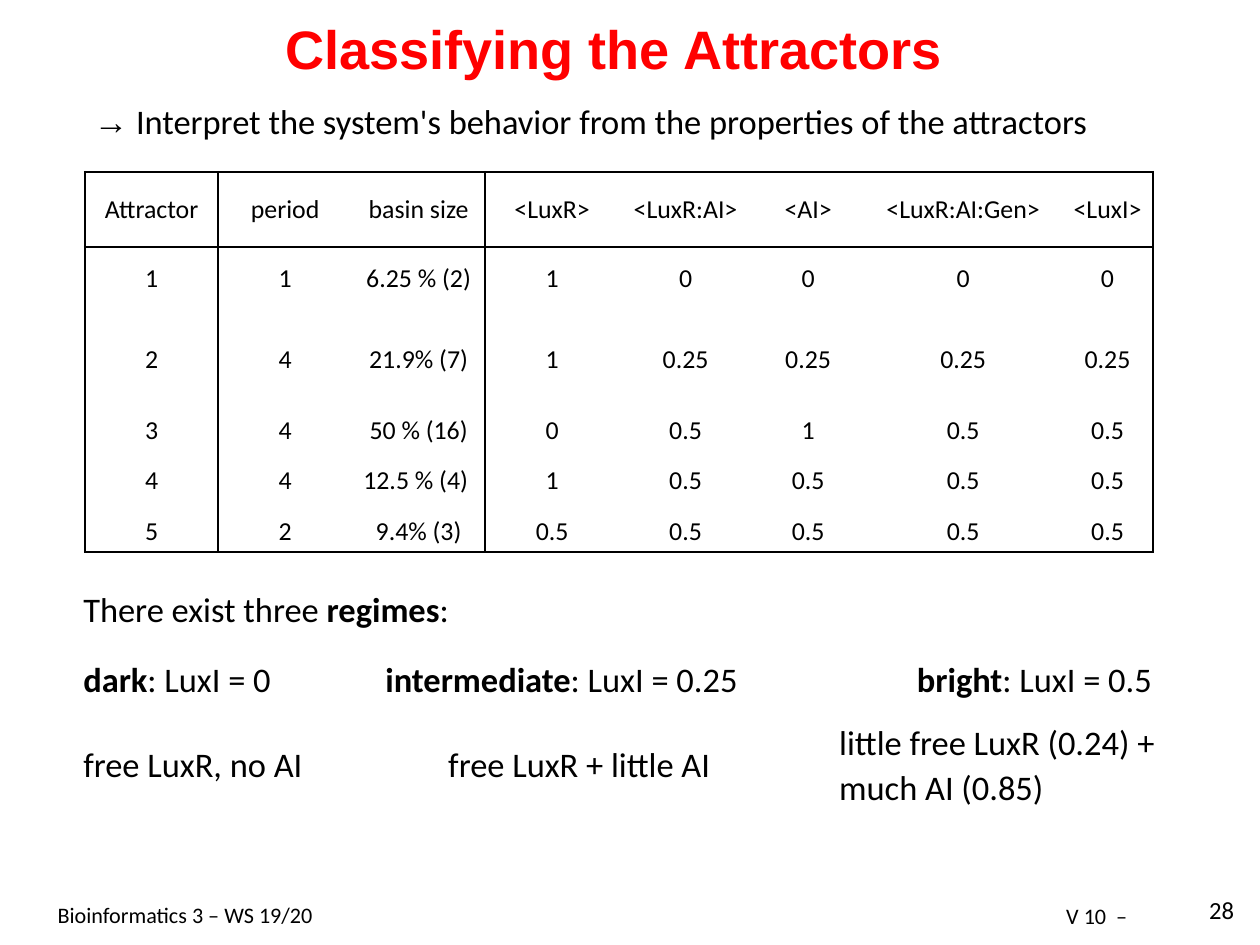
from lxml import etree
from pptx import Presentation
from pptx.dml.color import RGBColor
from pptx.enum.text import MSO_ANCHOR, PP_ALIGN
from pptx.oxml.ns import qn
from pptx.util import Pt

LEFT, CENTER, RIGHT = PP_ALIGN.LEFT, PP_ALIGN.CENTER, PP_ALIGN.RIGHT
TOP, MIDDLE, BOTTOM = MSO_ANCHOR.TOP, MSO_ANCHOR.MIDDLE, MSO_ANCHOR.BOTTOM

THEME = {
    "black": RGBColor(0, 0, 0),
    "white": RGBColor(255, 255, 255),
    "red": RGBColor(255, 0, 0),
    "title": 44,
    "body": 28,
    "cell": 21,
    "number": 20,
    "footer": 18,
    "heading_font": "Arial",
    "body_font": "Calibri",
}


def add_span(para, text, size, bold=False, font="body_font", color="black"):
    span = para.add_run()
    span.text = text
    span.font.size = Pt(THEME[size])
    span.font.bold = bold
    span.font.name = THEME[font]
    span.font.color.rgb = THEME[color]


def add_box(page, left, top, width, height, align=LEFT, anchor=TOP, spacing=1.1):
    frame = page.shapes.add_textbox(Pt(left), Pt(top), Pt(width), Pt(height)).text_frame
    frame.word_wrap = True
    frame.vertical_anchor = anchor
    frame.margin_left = frame.margin_right = frame.margin_top = frame.margin_bottom = 0
    para = frame.paragraphs[0]
    para.alignment = align
    para.line_spacing = spacing
    return para


deck = Presentation()
deck.slide_width, deck.slide_height = Pt(1024), Pt(768)
page = deck.slides.add_slide(deck.slide_layouts[6])

title = add_box(page, 65, 3, 868, 62.5, CENTER, BOTTOM, 1)
add_span(title, "Classifying the Attractors", "title", True, "heading_font", "red")

intro = add_box(page, 76.3, 77.8, 872, 37)
add_span(intro, "→", "body", font="heading_font")
add_span(intro, " Interpret the system's behavior from the properties of the attractors", "body")

attractors = [
    ["Attractor", "period", "basin size", "<LuxR>", "<LuxR:AI>", "<AI>", "<LuxR:AI:Gen>", "<LuxI>"],
    ["1", "1", "6.25 % (2)", "1", "0", "0", "0", "0"],
    ["2", "4", "21.9% (7)", "1", "0.25", "0.25", "0.25", "0.25"],
    ["3", "4", "50 % (16)", "0", "0.5", "1", "0.5", "0.5"],
    ["4", "4", "12.5 % (4) ", "1", "0.5", "0.5", "0.5", "0.5"],
    ["5", "2", "9.4% (3)", "0.5", "0.5", "0.5", "0.5", "0.5"],
]
column_widths = [108.5] * 5 + [90.7, 161.3, 73.4]
row_heights = [61.2, 51, 81, 33.8, 47.3, 34.6]
ruled_columns = {0, 1, 3, 8}
ruled_rows = {0, 1, 6}

table = page.shapes.add_table(
    len(row_heights), len(column_widths), Pt(69), Pt(139.7),
    Pt(sum(column_widths)), Pt(sum(row_heights)),
).table
table.first_row = table.horz_banding = False
for column, width in zip(table.columns, column_widths):
    column.width = Pt(width)
for row, height in zip(table.rows, row_heights):
    row.height = Pt(height)

for row_index, values in enumerate(attractors):
    for column_index, value in enumerate(values):
        cell = table.cell(row_index, column_index)
        cell.vertical_anchor = MIDDLE
        cell.margin_left = cell.margin_right = cell.margin_top = cell.margin_bottom = Pt(4.5)
        para = cell.text_frame.paragraphs[0]
        para.alignment = CENTER
        add_span(para, value, "cell")
        properties = cell._tc.get_or_add_tcPr()
        sides = {
            "a:lnL": column_index in ruled_columns,
            "a:lnR": column_index + 1 in ruled_columns,
            "a:lnT": row_index in ruled_rows,
            "a:lnB": row_index + 1 in ruled_rows,
        }
        for side, ruled in sides.items():
            line = etree.SubElement(properties, qn(side), w=str(Pt(2)))
            if ruled:
                paint = etree.SubElement(line, qn("a:solidFill"))
                etree.SubElement(paint, qn("a:srgbClr"), val=str(THEME["black"]))
            else:
                etree.SubElement(line, qn("a:noFill"))
        cell.fill.solid()
        cell.fill.fore_color.rgb = THEME["white"]

regimes = add_box(page, 67.7, 474.5, 337, 37)
add_span(regimes, "There exist three ", "body")
add_span(regimes, "regimes", "body", True)
add_span(regimes, ":", "body")

regime_levels = [
    (67.7, 173, "dark", ": LuxI = 0"),
    (313.2, 328, "intermediate", ": LuxI = 0.25"),
    (745.2, 212, "bright", ": LuxI = 0.5"),
]
for left, width, regime, level in regime_levels:
    para = add_box(page, left, 531.4, width, 33)
    add_span(para, regime, "body", True)
    add_span(para, level, "body")

regime_causes = [
    (67.7, 600.5, 220, 32, "free LuxR, no AI"),
    (364.3, 600.5, 225, 32, "free LuxR + little AI"),
    (682, 582.5, 301, 68, "little free LuxR (0.24) + much AI (0.85)"),
]
for left, top, width, height, cause in regime_causes:
    add_span(add_box(page, left, top, width, height), cause, "body")

footers = [
    (46.8, 730, 391.7, LEFT, "footer", "Bioinformatics 3 – WS 19/20"),
    (822.2, 731.5, 98, RIGHT, "footer", "V 10  – "),
    (931.7, 724.5, 71.3, RIGHT, "number", "28"),
]
for left, top, width, align, size, text in footers:
    add_span(add_box(page, left, top, width, 21, align), text, size)

deck.save("out.pptx")
